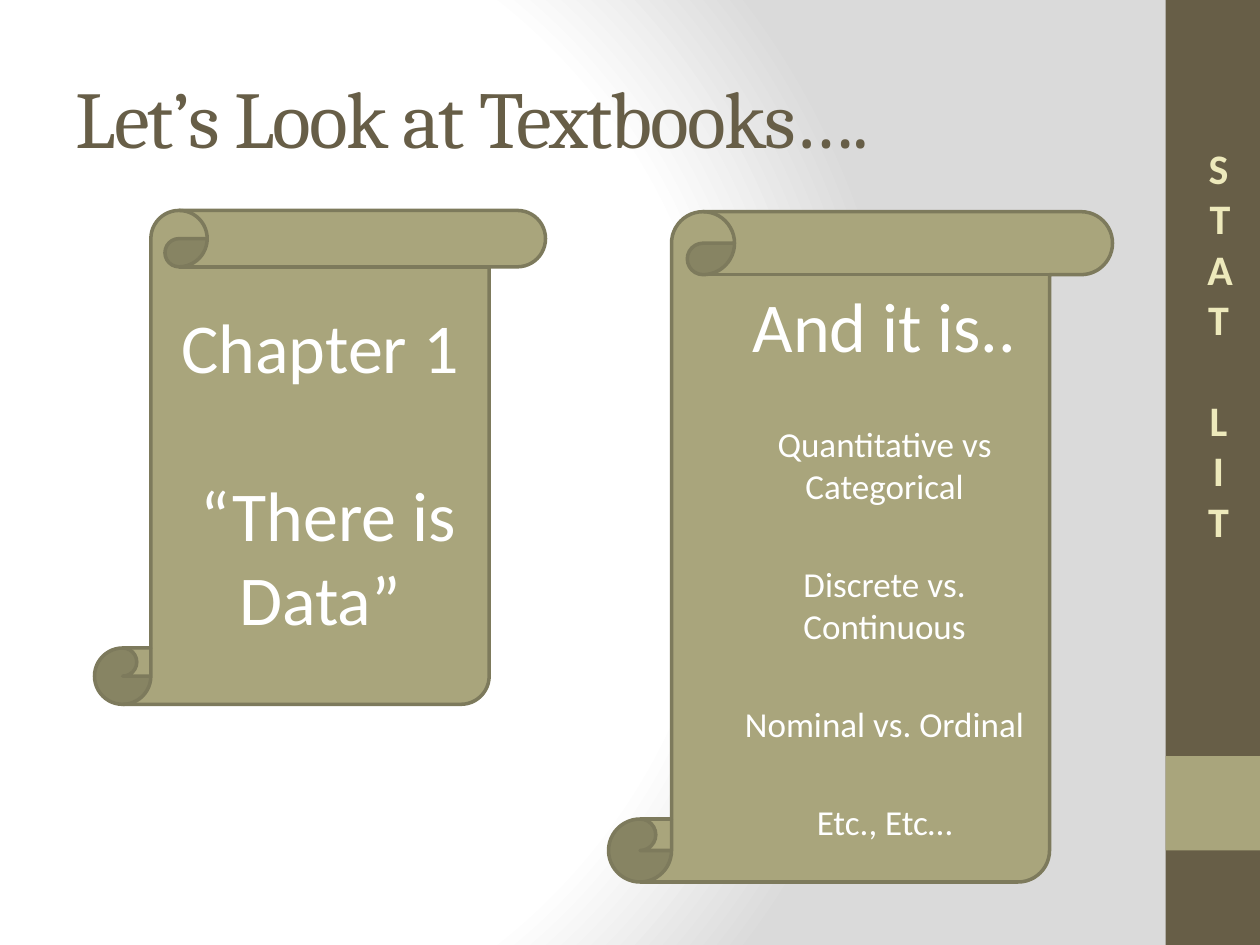
from lxml import etree
from pptx import Presentation
from pptx.dml.color import RGBColor
from pptx.enum import shapes, text
from pptx.oxml import ns, parse_xml
from pptx.util import Inches, Pt

COLORS = {
    "brown": "675E47", "olive": "A9A57C", "edge": "7D7A5C",
    "cream": "EDE9BB", "white": "FFFFFF", "gray": "DADADA",
}


def color(name):
    return RGBColor.from_string(COLORS[name])


def style(paragraph, size, hue, face="Calibri", bold=False):
    font = paragraph.font
    font.size, font.name, font.bold = Pt(size), face, bold
    font.color.rgb = color(hue)


def add_panel(slide, kind, box, fill, edge=None):
    panel = slide.shapes.add_shape(kind, *map(Inches, box))
    panel.shadow.inherit = False
    panel.fill.solid()
    panel.fill.fore_color.rgb = color(fill)
    if edge:
        panel.line.color.rgb = color(edge)
        panel.line.width = Pt(2)
    else:
        panel.line.fill.background()
    return panel


def paint_background(slide):
    slide.background.fill.gradient()
    gradient = next(slide.element.iter(ns.qn("a:gradFill")))
    stops = "".join(
        f'<a:gs pos="{position * 1000}"><a:srgbClr val="{COLORS[hue]}"/></a:gs>'
        for position, hue in [(0, "white"), (75, "white"), (100, "gray")])
    gradient.getparent().replace(gradient, parse_xml(
        f'<a:gradFill {ns.nsdecls("a")} rotWithShape="1"><a:gsLst>{stops}</a:gsLst>'
        '<a:path path="circle"><a:fillToRect l="20000" t="50000" r="100000" b="50000"/>'
        '</a:path></a:gradFill>'))


def add_sidebar(slide, box):
    left, top, width, height = box
    rect = shapes.MSO_SHAPE.RECTANGLE
    add_panel(slide, rect, box, "brown")
    add_panel(slide, rect, (left, top + 0.8 * height, width, width), "olive")

    # Stacked course name
    course = slide.shapes.add_textbox(*map(Inches, (left + 0.08, 0.79, 0.68, 3.88)))
    frame = course.text_frame
    frame.word_wrap = False
    frame.auto_size = text.MSO_AUTO_SIZE.SHAPE_TO_FIT_TEXT
    course.element.find(".//" + ns.qn("a:bodyPr")).set("vert", "wordArtVert")
    line = frame.paragraphs[0]
    line.text = "STAT LIT"
    line.alignment = text.PP_ALIGN.CENTER
    style(line, 24, "cream", bold=True)


def set_title(slide, box, wording):
    title = slide.shapes.title
    title.left, title.top, title.width, title.height = map(Inches, box)
    frame = title.text_frame
    frame.vertical_anchor = text.MSO_ANCHOR.MIDDLE
    frame.auto_size = text.MSO_AUTO_SIZE.NONE
    heading = frame.paragraphs[0]
    heading.text = wording
    heading.alignment = text.PP_ALIGN.LEFT
    style(heading, 46, "brown", "Cambria")
    heading.runs[0].font.size = Pt(46)
    etree.ETXPath(".//" + ns.qn("a:rPr"))(title.element)[0].set("spc", "-100")


def add_scroll(slide, box, lines, gap, first_gap=0, margin_left=0.1):
    """Draw a scroll; lines holds (wording, size) pairs, gaps are in points."""
    scroll = add_panel(slide, shapes.MSO_SHAPE.VERTICAL_SCROLL, box, "olive", "edge")
    frame = scroll.text_frame
    frame.word_wrap = True
    frame.vertical_anchor = text.MSO_ANCHOR.MIDDLE
    frame.margin_left = Inches(margin_left)
    for index, (wording, size) in enumerate(lines):
        line = frame.add_paragraph() if index else frame.paragraphs[0]
        line.text = wording
        line.alignment = text.PP_ALIGN.CENTER
        line.space_before = Pt(gap if index else first_gap)
        style(line, size, "white")


def build():
    deck = Presentation()
    deck.slide_width, deck.slide_height = Inches(10), Inches(7.5)
    slide = deck.slides.add_slide(deck.slide_layouts[5])
    paint_background(slide)
    add_sidebar(slide, (9.25, 0, 0.75, 7.5))
    set_title(slide, (0.5, 0.3, 8.33, 1.25), "Let’s Look at Textbooks….")

    # Chapter and its topics
    add_scroll(slide, (0.75, 1.67, 3.58, 3.92),
               [("Chapter 1", 40), (" “There is Data”", 40)], gap=48)
    topics = ["Quantitative vs Categorical", "Discrete vs. Continuous",
              "Nominal vs. Ordinal", "Etc., Etc…"]
    add_scroll(slide, (4.83, 1.68, 4, 5.32),
               [("And it is..", 40)] + [(topic, 20) for topic in topics],
               gap=32, first_gap=8, margin_left=0.48)
    deck.save("out.pptx")


if __name__ == "__main__":
    build()
